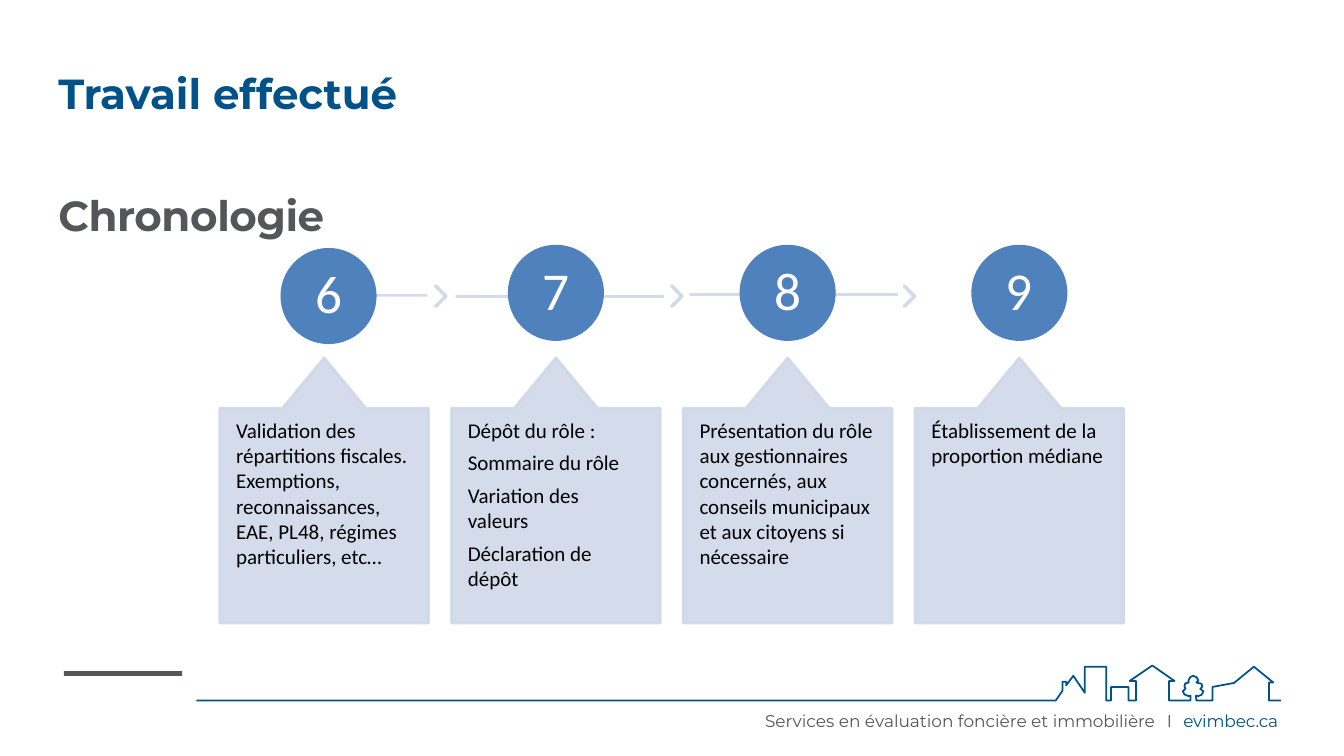
from dataclasses import dataclass

from lxml.etree import SubElement
from pptx import Presentation
from pptx.dml.color import RGBColor
from pptx.enum.shapes import MSO_CONNECTOR, MSO_SHAPE
from pptx.enum.text import MSO_ANCHOR, PP_ALIGN
from pptx.oxml.ns import qn
from pptx.util import Cm, Pt

NAVY = RGBColor(0x00, 0x52, 0x89)
GREY = RGBColor(0x54, 0x57, 0x5A)
BLUE = RGBColor(0x4F, 0x81, 0xBD)
PALE = RGBColor(0xD0, 0xD8, 0xE8)
WHITE = RGBColor(0xFF, 0xFF, 0xFF)
BLACK = RGBColor(0x00, 0x00, 0x00)

HEADING_FONT, BODY_FONT = "Montserrat", "Calibri"

# Timeline grid, in centimetres
FIRST_LEFT, PITCH = 5.54, 5.84
CARD_TOP, CARD_W, CARD_H = 9.02, 5.26, 6.68
SHOULDER, TIP_HALF = 1.27, 1.05
CIRCLE = 2.35


@dataclass
class Step:
    number: str
    lines: list[str]
    dx: float = 0
    cy: float = 7.38


@dataclass
class Arrow:
    start: float
    end: float
    y: float
    chevron: float


@dataclass
class Words:
    text: str
    color: RGBColor
    spacing: int = 0


STEPS = [
    Step("6", ["Validation des répartitions fiscales. Exemptions, reconnaissances, "
               "EAE, PL48, régimes particuliers, etc…"], 0.11, 7.46),
    Step("7", ["Dépôt du rôle :", "Sommaire du rôle", "Variation des valeurs",
               "Déclaration de dépôt"]),
    Step("8", ["Présentation du rôle aux gestionnaires concernés, aux conseils "
               "municipaux et aux citoyens si nécessaire"]),
    Step("9", ["Établissement de la proportion médiane"]),
]
ARROWS = [
    Arrow(8.43, 10.77, 7.44, 10.97),
    Arrow(11.48, 16.74, 7.47, 16.92),
    Arrow(17.37, 22.63, 7.42, 22.78),
]

# Skyline points, in hundredths of a centimetre
LEFT_HOUSES = [
    (495, 1765), (2661, 1765), (2678, 1740), (2678, 1718), (2687, 1718), (2687, 1727),
    (2705, 1703), (2734, 1746), (2734, 1680), (2788, 1680), (2788, 1765), (2800, 1765),
    (2800, 1731), (2844, 1731), (2844, 1765), (2863, 1765), (2863, 1716), (2847, 1716),
    (2904, 1677), (2960, 1716), (2946, 1716), (2946, 1765), (3000, 1765),
]
TREE = [
    (3000, 1753), (2995, 1754), (2985, 1750), (2981, 1742), (2988, 1735), (2985, 1730),
    (2987, 1722), (2996, 1720), (2995, 1715), (3000, 1706), (3007, 1703), (3016, 1707),
    (3020, 1715), (3015, 1720), (3028, 1723), (3030, 1730), (3025, 1736), (3033, 1742),
    (3028, 1751), (3020, 1754), (3014, 1753),
]
RIGHT_HOUSE = [
    (3015, 1765), (3056, 1765), (3056, 1731), (3110, 1721), (3160, 1680), (3209, 1720),
    (3198, 1720), (3198, 1765), (3228, 1765),
]


def set_alpha(s) -> None:
    for color in s._element.spPr.iter(qn("a:srgbClr")):
        SubElement(color, qn("a:alpha")).set("val", "90000")


def paint(s, color: RGBColor) -> None:
    s.shadow.inherit = False
    s.fill.solid()
    s.fill.fore_color.rgb = color
    s.line.color.rgb = color
    s.line.width = Pt(2)


def set_font(p, name: str, size: float, color: RGBColor | None = None, bold: bool = False) -> None:
    p.font.name = name
    p.font.size = Pt(size)
    p.font.bold = bold
    if color is not None:
        p.font.color.rgb = color


def set_margins(tf, left: float, top: float, right: float, bottom: float) -> None:
    tf.margin_left, tf.margin_top = Cm(left), Cm(top)
    tf.margin_right, tf.margin_bottom = Cm(right), Cm(bottom)


def add_text(slide, x: float, y: float, w: float, h: float, words: list[Words],
             size: float, bold: bool = False, tab: float = 0) -> None:
    tf = slide.shapes.add_textbox(Cm(x), Cm(y), Cm(w), Cm(h)).text_frame
    tf.word_wrap = True
    set_margins(tf, 0, 0, 0, 0)
    p = tf.paragraphs[0]
    if tab:
        tabs = SubElement(p._p.get_or_add_pPr(), qn("a:tabLst"))
        stop = SubElement(tabs, qn("a:tab"))
        stop.set("pos", str(Cm(tab)))
        stop.set("algn", "l")
    same_color = len({w.color for w in words}) == 1
    set_font(p, HEADING_FONT, size, words[0].color if same_color else None, bold)
    for part in words:
        r = p.add_run()
        r.text = part.text
        if not same_color:
            r.font.color.rgb = part.color
        if part.spacing:
            r._r.get_or_add_rPr().set("spc", str(part.spacing))


def add_outline(slide, points: list[tuple[int, int]], closed: bool):
    builder = slide.shapes.build_freeform(*points[0], scale=Cm(0.01))
    builder.add_line_segments(points[1:], close=closed)
    s = builder.convert_to_shape()
    s.shadow.inherit = False
    return s


def add_arrow(slide, arrow: Arrow) -> None:
    s = slide.shapes.add_connector(MSO_CONNECTOR.STRAIGHT, Cm(arrow.start), Cm(arrow.y),
                                   Cm(arrow.end), Cm(arrow.y))
    s.line.color.rgb = PALE
    s.line.width = Pt(2)
    SubElement(s._element.spPr, qn("a:effectLst"))
    set_alpha(s)
    s = slide.shapes.add_shape(MSO_SHAPE.CHEVRON, Cm(arrow.chevron), Cm(7.21), Cm(0.28), Cm(0.51))
    s.adjustments[0] = 0.9
    paint(s, PALE)
    set_alpha(s)


def add_step(slide, step: Step, left: float) -> None:
    center = left + CARD_W / 2
    # Numbered circle
    s = slide.shapes.add_shape(MSO_SHAPE.OVAL, Cm(center + step.dx - CIRCLE / 2),
                               Cm(step.cy - CIRCLE / 2), Cm(CIRCLE), Cm(CIRCLE))
    paint(s, BLUE)
    tf = s.text_frame
    set_margins(tf, 0, 0, 0, 0)
    tf.vertical_anchor = MSO_ANCHOR.MIDDLE
    p = tf.paragraphs[0]
    p.text = step.number
    p.alignment = PP_ALIGN.CENTER
    p.line_spacing = 0.9
    set_font(p, BODY_FONT, 38, WHITE)
    # Card with a pointed top
    right, bottom, shoulder = left + CARD_W, CARD_TOP + CARD_H, CARD_TOP + SHOULDER
    corners = [(left, shoulder), (center - TIP_HALF, shoulder), (center, CARD_TOP),
               (center + TIP_HALF, shoulder), (right, shoulder), (right, bottom), (left, bottom)]
    s = add_outline(slide, [(round(x * 100), round(y * 100)) for x, y in corners], True)
    paint(s, PALE)
    set_alpha(s)
    tf = s.text_frame
    tf.word_wrap = True
    tf.vertical_anchor = MSO_ANCHOR.TOP
    set_margins(tf, 0.41, 1.5, 0.41, 0.46)
    for i, line in enumerate(step.lines):
        p = tf.add_paragraph() if i else tf.paragraphs[0]
        p.text = line
        p.alignment = PP_ALIGN.LEFT
        p.space_after = Pt(5.25)
        set_font(p, BODY_FONT, 15, BLACK)


def main() -> None:
    prs = Presentation()
    prs.slide_width, prs.slide_height = Cm(33.87), Cm(19.05)
    slide = prs.slides.add_slide(prs.slide_layouts[6])

    # Footer band
    s = slide.shapes.add_shape(MSO_SHAPE.RECTANGLE, Cm(1.61), Cm(16.91), Cm(2.98), Cm(0.12))
    paint(s, GREY)
    s.line.fill.background()
    s = add_outline(slide, LEFT_HOUSES + TREE + RIGHT_HOUSE, False)
    s.fill.background()
    s.line.color.rgb = NAVY
    s.line.width = Pt(1.25)

    # Headings
    add_text(slide, 1.47, 1.7, 25.27, 2.57, [Words("Travail effectué", NAVY)], 30, True)
    add_text(slide, 1.47, 4.77, 30.91, 1.3, [Words("Chronologie", GREY, -30)], 30, True)

    # Footer text
    add_text(slide, 29.41, 17.91, 3.2, 0.51,
             [Words("I\t", GREY, -30), Words("evimbec.ca", NAVY, -10)], 12.1, tab=0.41)
    add_text(slide, 19.28, 17.91, 10.05, 0.51,
             [Words("Services en évaluation foncière et ", GREY),
              Words("immobilière", GREY, -10)], 12.1)

    # Timeline
    for arrow in ARROWS:
        add_arrow(slide, arrow)
    for i, step in enumerate(STEPS):
        add_step(slide, step, FIRST_LEFT + i * PITCH)

    prs.save("out.pptx")


if __name__ == "__main__":
    main()
